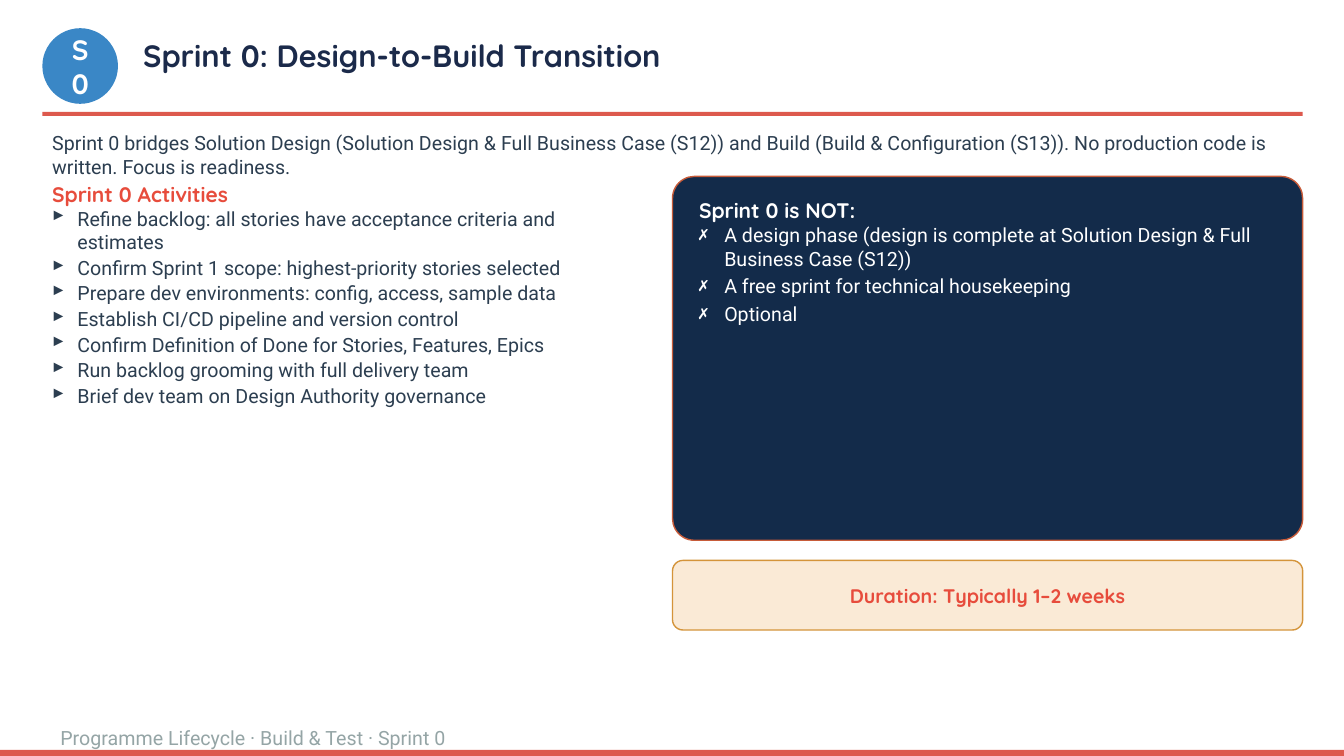
from lxml.etree import SubElement
from pptx import Presentation
from pptx.dml.color import RGBColor
from pptx.enum.shapes import MSO_SHAPE
from pptx.enum.text import MSO_ANCHOR, MSO_AUTO_SIZE, PP_ALIGN
from pptx.oxml.ns import qn
from pptx.util import Inches, Pt

WIDTH, HEIGHT = 13.33, 7.5
MARGIN = 0.42
CONTENT_WIDTH = 12.5
HALF_WIDTH = CONTENT_WIDTH / 2
RIGHT_COLUMN = MARGIN + HALF_WIDTH
BODY_TOP = 1.75
HEADING_FONT, BODY_FONT = "Quicksand", "Roboto"
RED, ACCENT, INK, WHITE = "DD594D", "E74C3C", "2C3E50", "FFFFFF"

INTRO = ("Sprint 0 bridges Solution Design (Solution Design & Full Business Case (S12)) "
         "and Build (Build & Configuration (S13)). No production code is written. "
         "Focus is readiness.")
ACTIVITIES = [
    "Refine backlog: all stories have acceptance criteria and estimates",
    "Confirm Sprint 1 scope: highest-priority stories selected",
    "Prepare dev environments: config, access, sample data",
    "Establish CI/CD pipeline and version control",
    "Confirm Definition of Done for Stories, Features, Epics",
    "Run backlog grooming with full delivery team",
    "Brief dev team on Design Authority governance",
]
EXCLUSIONS = [
    "A design phase (design is complete at Solution Design & Full Business Case (S12))",
    "A free sprint for technical housekeeping",
    "Optional",
]


def color(value):
    """Turn a hex string into a colour."""
    return RGBColor.from_string(value)


def place(shape, box):
    """Move a shape to a box of left, top, width and height in inches."""
    shape.left, shape.top, shape.width, shape.height = map(Inches, box)


def style(paragraph, size, hex_color, heading=False):
    """Format a paragraph as heading or body text."""
    font = paragraph.font
    font.name = HEADING_FONT if heading else BODY_FONT
    font.size = Pt(size)
    font.bold = heading
    font.color.rgb = color(hex_color)


def add_text(slide, box):
    """Add a wrapping text box and return its text frame."""
    frame = slide.shapes.add_textbox(*map(Inches, box)).text_frame
    frame.word_wrap = True
    return frame


def add_panel(slide, kind, box, fill, line=None, corner=None):
    """Add a flat preset shape with an optional outline and corner radius."""
    shape = slide.shapes.add_shape(kind, *map(Inches, box))
    shape.shadow.inherit = False
    shape.fill.solid()
    shape.fill.fore_color.rgb = color(fill)
    if line:
        shape.line.color.rgb = color(line)
        shape.line.width = Pt(1)
    else:
        shape.line.fill.background()
    if corner:
        shape.adjustments[0] = corner
    return shape


def set_insets(frame, horizontal, vertical):
    """Set the inner margins of a text frame in inches."""
    frame.margin_left = frame.margin_right = Inches(horizontal)
    frame.margin_top = frame.margin_bottom = Inches(vertical)


def write_line(frame, text, size, hex_color, heading=False, centered=False):
    """Fill the first paragraph of a frame with one styled line."""
    paragraph = frame.paragraphs[0]
    paragraph.text = text
    paragraph.alignment = PP_ALIGN.CENTER if centered else PP_ALIGN.LEFT
    style(paragraph, size, hex_color, heading)


def write_list(frame, heading, heading_color, items, item_color, bullet, gap):
    """Write a heading followed by a bulleted list."""
    write_line(frame, heading, 15, heading_color, heading=True)
    for item in items:
        paragraph = frame.add_paragraph()
        paragraph.text = item
        paragraph.alignment = PP_ALIGN.LEFT
        if item != items[-1]:
            paragraph.space_after = Pt(gap)
        properties = paragraph._p.get_or_add_pPr()
        properties.set("marL", str(Inches(0.25)))
        properties.set("indent", str(-Inches(0.25)))
        SubElement(properties, qn("a:buChar")).set("char", bullet)
        style(paragraph, 14, item_color)


def add_header(slide, box):
    """Place the badge, the title and the rule beneath them."""
    left, top, width, height = box
    badge_size = 0.75
    badge = add_panel(slide, MSO_SHAPE.OVAL, (left, top, badge_size, badge_size), "3A87C6")
    badge.text_frame.vertical_anchor = MSO_ANCHOR.MIDDLE
    write_line(badge.text_frame, "S0", 20, WHITE, heading=True, centered=True)

    title = slide.shapes.title
    place(title, (left + 0.9, top + 0.03, width - 0.69, 0.69))
    frame = title.text_frame
    frame.auto_size = MSO_AUTO_SIZE.NONE
    frame.vertical_anchor = MSO_ANCHOR.TOP
    write_line(frame, "Sprint 0: Design-to-Build Transition", 22, "1B2A4A", heading=True)
    add_panel(slide, MSO_SHAPE.RECTANGLE, (left, top + height - 0.04, width, 0.04), RED)


def add_activities(slide, box):
    """Place the list of activities."""
    write_list(add_text(slide, box), "Sprint 0 Activities", ACCENT, ACTIVITIES, INK, "▸", 1.5)


def add_exclusions(slide, box):
    """Place the dark card that says what the sprint is not."""
    card = add_panel(slide, MSO_SHAPE.ROUNDED_RECTANGLE, box, "132B4A", "C75B39", 0.06)
    frame = card.text_frame
    frame.vertical_anchor = MSO_ANCHOR.TOP
    set_insets(frame, 0.2, 0.15)
    write_list(frame, "Sprint 0 is NOT:", WHITE, EXCLUSIONS, WHITE, "✗", 3)


def add_duration(slide, box):
    """Place the translucent duration banner."""
    banner = add_panel(slide, MSO_SHAPE.ROUNDED_RECTANGLE, box, "E89A35", "D4943A", 0.15)
    fill_color = banner._element.spPr.find(qn("a:solidFill"))[0]
    SubElement(fill_color, qn("a:alpha")).set("val", "20000")
    frame = banner.text_frame
    frame.vertical_anchor = MSO_ANCHOR.MIDDLE
    set_insets(frame, 0.2, 0.05)
    write_line(frame, "Duration: Typically 1–2 weeks", 14, ACCENT, heading=True, centered=True)


def add_footer(slide, box):
    """Place the footer label above the bar at the slide's lower edge."""
    left, top, width, height = box
    bar = 0.06
    add_panel(slide, MSO_SHAPE.RECTANGLE, (left, top + height - bar, width, bar), RED)
    frame = add_text(slide, (left + 0.5, top, 5.56, 0.25))
    frame.auto_size = MSO_AUTO_SIZE.SHAPE_TO_FIT_TEXT
    write_line(frame, "Programme Lifecycle · Build & Test · Sprint 0", 14, "95A5A6")


def main():
    """Build the slide and save it."""
    presentation = Presentation()
    presentation.slide_width, presentation.slide_height = Inches(WIDTH), Inches(HEIGHT)
    slide = presentation.slides.add_slide(presentation.slide_layouts[5])
    write_line(add_text(slide, (MARGIN, 1.25, CONTENT_WIDTH, 0.42)), INTRO, 14, INK)
    add_activities(slide, (MARGIN, BODY_TOP, HALF_WIDTH - MARGIN, 4.86))
    add_exclusions(slide, (RIGHT_COLUMN, BODY_TOP, HALF_WIDTH, 3.61))
    add_duration(slide, (RIGHT_COLUMN, BODY_TOP + 3.81, HALF_WIDTH, 0.69))
    add_header(slide, (MARGIN, 0.28, CONTENT_WIDTH, 0.87))
    add_footer(slide, (0, 7.15, WIDTH, HEIGHT - 7.15))
    presentation.save("out.pptx")


if __name__ == "__main__":
    main()
